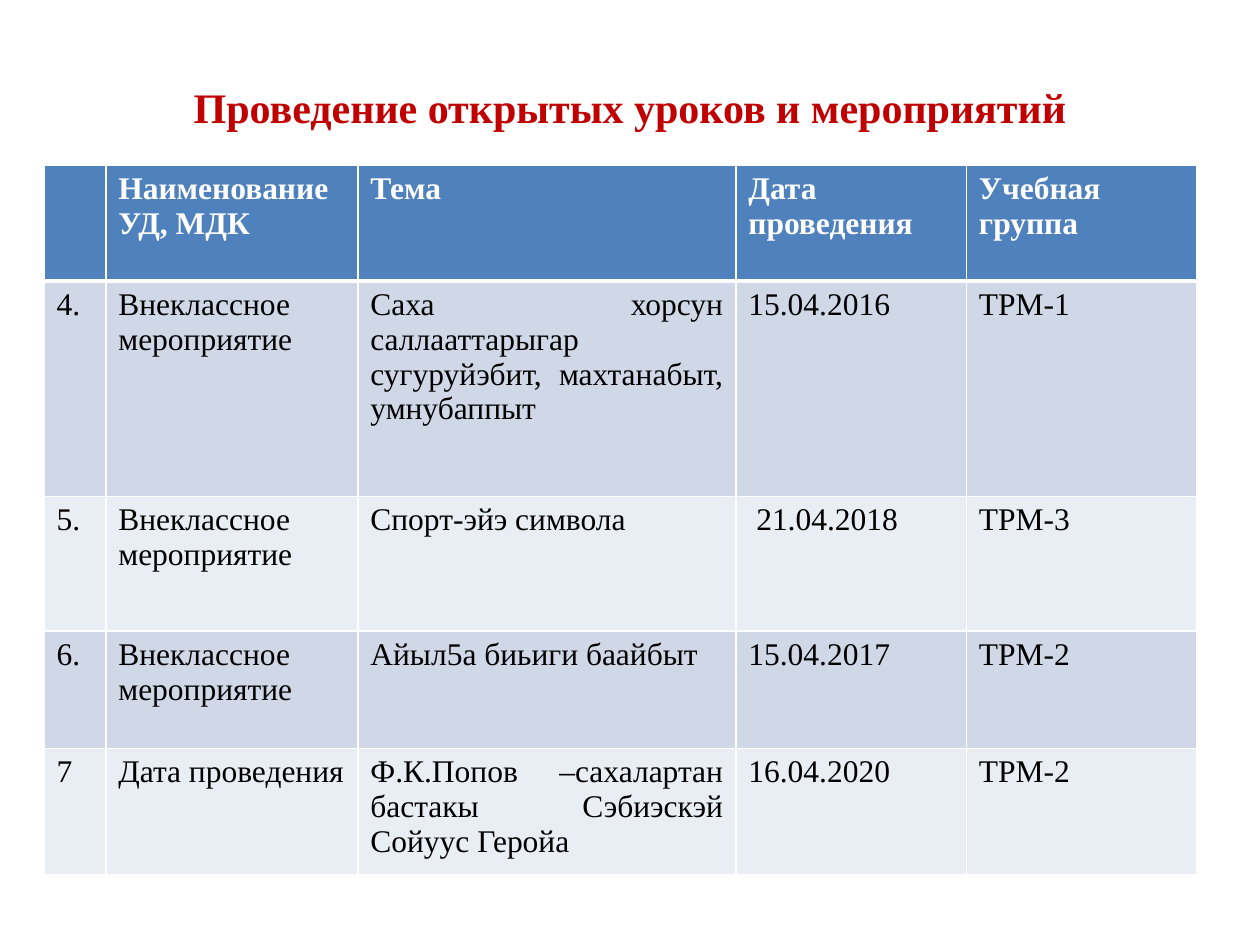
"""Build the slide with the table of open lessons and events."""
from lxml.etree import SubElement
from pptx import Presentation
from pptx.dml.color import RGBColor
from pptx.enum.text import MSO_ANCHOR as Anchor, PP_ALIGN as Align
from pptx.oxml.ns import qn
from pptx.util import Inches, Pt

FONT = "Times New Roman"
RED = RGBColor(0xC0, 0x00, 0x00)
BLUE = RGBColor(0x4F, 0x81, 0xBD)
BANDS = RGBColor(0xE9, 0xED, 0xF4), RGBColor(0xD0, 0xD8, 0xE8)
WHITE = RGBColor(0xFF, 0xFF, 0xFF)
BLACK = RGBColor(0x00, 0x00, 0x00)

COLUMNS = 0.49, 2, 3, 1.83, 1.83
ROWS = 0.92, 1.71, 1.07, 0.93, 0.93
EVENT = "Внеклассное мероприятие"
CONTENT = [
    ("", "Наименование УД, МДК", "Тема", "Дата проведения", "Учебная группа"),
    ("4.", EVENT, "Саха хорсун саллааттарыгар сугуруйэбит, махтанабыт, умнубаппыт",
     "15.04.2016", "ТРМ-1"),
    ("5.", EVENT, "Спорт-эйэ символа", " 21.04.2018", "ТРМ-3"),
    ("6.", EVENT, "Айыл5а биьиги баайбыт", "15.04.2017", "ТРМ-2"),
    ("7", "Дата проведения", "Ф.К.Попов –сахалартан бастакы Сэбиэскэй Сойуус Геройа",
     "16.04.2020", "ТРМ-2"),
]


def write(frame, text, size=18, color=BLACK, bold=False, align=Align.JUSTIFY):
    """Put one formatted paragraph into a text frame."""
    para = frame.paragraphs[0]
    para.alignment = align
    para.font.size = Pt(size)
    if text:
        span = para.add_run()
        span.text = text
        span.font.name = FONT
        span.font.size = Pt(size)
        span.font.bold = bold
        span.font.color.rgb = color


def add_title(page, text):
    """Add the centred heading."""
    box = page.shapes.add_textbox(Inches(0.5), Inches(0.3), Inches(9), Inches(1.09))
    box.text_frame.word_wrap = True
    box.text_frame.vertical_anchor = Anchor.MIDDLE
    write(box.text_frame, text, size=24, color=RED, bold=True, align=Align.CENTER)


def set_borders(cell, **widths):
    """Draw white cell borders, with widths in points by side L, R, T and B."""
    properties = cell._tc.get_or_add_tcPr()
    for side, width in widths.items():
        line = SubElement(properties, qn(f"a:ln{side}"), w=str(Pt(width)))
        fill = SubElement(line, qn("a:solidFill"))
        SubElement(fill, qn("a:srgbClr"), val=str(WHITE))


def add_table(page, content):
    """Add the table with a blue header and banded rows."""
    table = page.shapes.add_table(
        len(ROWS), len(COLUMNS), Inches(0.35), Inches(1.31),
        Inches(sum(COLUMNS)), Inches(sum(ROWS))).table
    for column, width in zip(table.columns, COLUMNS):
        column.width = Inches(width)
    for number, (row, height, texts) in enumerate(zip(table.rows, ROWS, content)):
        row.height = Inches(height)
        header = number == 0
        for cell, text in zip(row.cells, texts):
            set_borders(cell, L=1, R=1, T=3 if number == 1 else 1, B=3 if header else 1)
            cell.fill.solid()
            cell.fill.fore_color.rgb = BLUE if header else BANDS[number % 2]
            write(cell.text_frame, text, color=WHITE if header else BLACK, bold=header)


def main():
    """Build and save the deck."""
    deck = Presentation()
    deck.slide_width, deck.slide_height = Inches(10), Inches(7.5)
    page = deck.slides.add_slide(deck.slide_layouts[6])
    add_title(page, "Проведение открытых уроков и мероприятий")
    add_table(page, CONTENT)
    deck.save("out.pptx")


if __name__ == "__main__":
    main()
